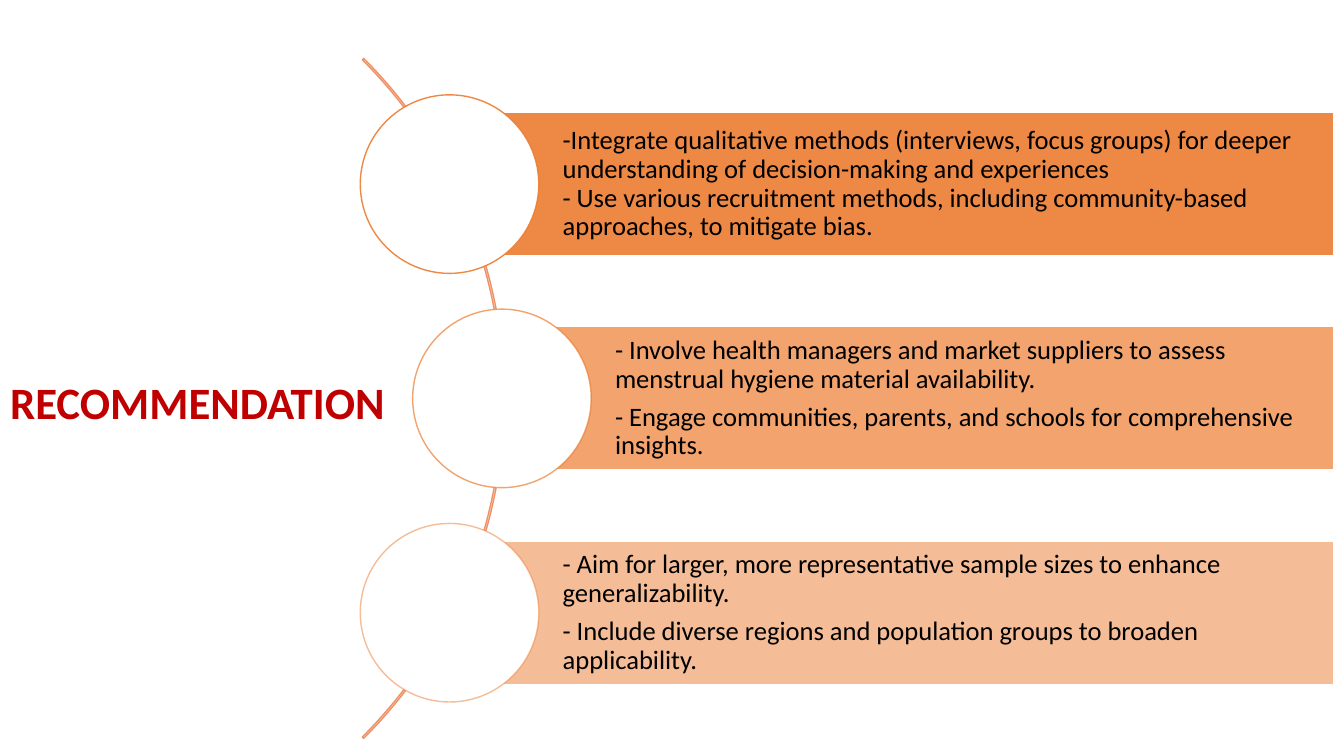
import pptx
import pptx.dml.color
import pptx.enum.shapes
import pptx.enum.text
import pptx.oxml
import pptx.oxml.ns
import pptx.util

Cm = pptx.util.Cm
Pt = pptx.util.Pt
RGBColor = pptx.dml.color.RGBColor
MSO_SHAPE = pptx.enum.shapes.MSO_SHAPE
LEFT = pptx.enum.text.PP_ALIGN.LEFT
MIDDLE = pptx.enum.text.MSO_ANCHOR.MIDDLE

ORANGE = RGBColor(0xED, 0x7D, 0x31)
ARC_ORANGE = RGBColor(0xEF, 0x91, 0x66)
RED = RGBColor(0xC0, 0x00, 0x00)
BLACK = RGBColor(0x00, 0x00, 0x00)
WHITE = RGBColor(0xFF, 0xFF, 0xFF)

ARC_SIZE = 24.23
ARC_CENTRE_X = 0.6
MIDDLE_Y = 10.04
ROW_PITCH = 5.4
BAR_RIGHT = 33.61
BAR_HEIGHT = 3.61
CIRCLE_SIZE = 4.5

RECOMMENDATIONS = [
    (11.33, 90, [
        "-Integrate qualitative methods (interviews, focus groups) for deeper "
        "understanding of decision-making and experiences\v"
        "- Use various recruitment methods, including community-based "
        "approaches, to mitigate bias."]),
    (12.65, 70, [
        "- Involve health managers and market suppliers to assess "
        "menstrual hygiene material availability.",
        "- Engage communities, parents, and schools for comprehensive insights."]),
    (11.33, 50, [
        "- Aim for larger, more representative sample sizes to enhance "
        "generalizability.",
        "- Include diverse regions and population groups to broaden "
        "applicability."]),
]


class RecommendationPage:
    """Hold the style and the current slide, and draw its elements."""

    def __init__(self, deck, font="Calibri"):
        """Add a title-only slide to the deck."""
        self.font = font
        self.page = deck.slides.add_slide(deck.slide_layouts[5])

    def set_text(self, box, paragraphs, size, color, bold=False):
        """Fill a shape with left-aligned, vertically centred paragraphs."""
        frame = box.text_frame
        frame.word_wrap = True
        frame.vertical_anchor = MIDDLE
        frame.text = "\n".join(paragraphs)
        for para in frame.paragraphs:
            para.alignment = LEFT
            para.line_spacing = 0.9
            para.space_before = Pt(0)
            para.space_after = Pt(size * 0.35)
            for span in para.runs:
                span.font.name = self.font
                span.font.size = Pt(size)
                span.font.bold = bold
                span.font.color.rgb = color

    def title(self, text, left, top, width, height):
        """Place and format the title placeholder."""
        box = self.page.shapes.title
        box.left, box.top = Cm(left), Cm(top)
        box.width, box.height = Cm(width), Cm(height)
        self.set_text(box, [text], 32, RED, bold=True)

    def shape(self, kind, left, top, width, height, fill, line):
        """Add a preset shape with a thin outline and an optional fill."""
        box = self.page.shapes.add_shape(
            kind, Cm(left), Cm(top), Cm(width), Cm(height))
        box.shadow.inherit = False
        if fill is None:
            box.fill.background()
        else:
            box.fill.solid()
            box.fill.fore_color.rgb = fill
        box.line.color.rgb = line
        box.line.width = Pt(1)
        return box

    def set_opacity(self, box, color, percent):
        """Apply an opacity to every use of a colour in a shape."""
        for node in box.element.spPr.iter(pptx.oxml.ns.qn("a:srgbClr")):
            if node.get("val") == str(color):
                alpha = pptx.oxml.parse_xml(
                    f'<a:alpha {pptx.oxml.ns.nsdecls("a")} val="{percent * 1000}"/>')
                node.append(alpha)

    def arc(self):
        """Draw the thin arc behind the circles."""
        half = ARC_SIZE / 2
        arc = self.shape(MSO_SHAPE.BLOCK_ARC, ARC_CENTRE_X - half,
                         MIDDLE_Y - half, ARC_SIZE, ARC_SIZE, None, ARC_ORANGE)
        for index, value in enumerate((189, 27, 0.002)):
            arc.adjustments[index] = value

    def recommendation(self, centre_x, centre_y, opacity, paragraphs):
        """Draw a text bar with a circle centred on its left end."""
        bar = self.shape(MSO_SHAPE.RECTANGLE, centre_x, centre_y - BAR_HEIGHT / 2,
                         BAR_RIGHT - centre_x, BAR_HEIGHT, ORANGE, WHITE)
        self.set_opacity(bar, ORANGE, opacity)
        frame = bar.text_frame
        frame.margin_left = Cm(2.85)
        frame.margin_top = frame.margin_right = frame.margin_bottom = Cm(0.13)
        self.set_text(bar, paragraphs, 19, BLACK)
        radius = CIRCLE_SIZE / 2
        circle = self.shape(MSO_SHAPE.OVAL, centre_x - radius, centre_y - radius,
                            CIRCLE_SIZE, CIRCLE_SIZE, WHITE, ORANGE)
        self.set_opacity(circle, ORANGE, opacity)


def main():
    """Build and save the deck."""
    deck = pptx.Presentation()
    deck.slide_width, deck.slide_height = Cm(33.87), Cm(19.05)
    page = RecommendationPage(deck)
    page.title("RECOMMENDATION", 0, 8.36, 10.13, 3.68)
    page.arc()
    for row, (centre_x, opacity, paragraphs) in enumerate(RECOMMENDATIONS):
        centre_y = MIDDLE_Y + (row - 1) * ROW_PITCH
        page.recommendation(centre_x, centre_y, opacity, paragraphs)
    deck.save("out.pptx")


if __name__ == "__main__":
    main()
